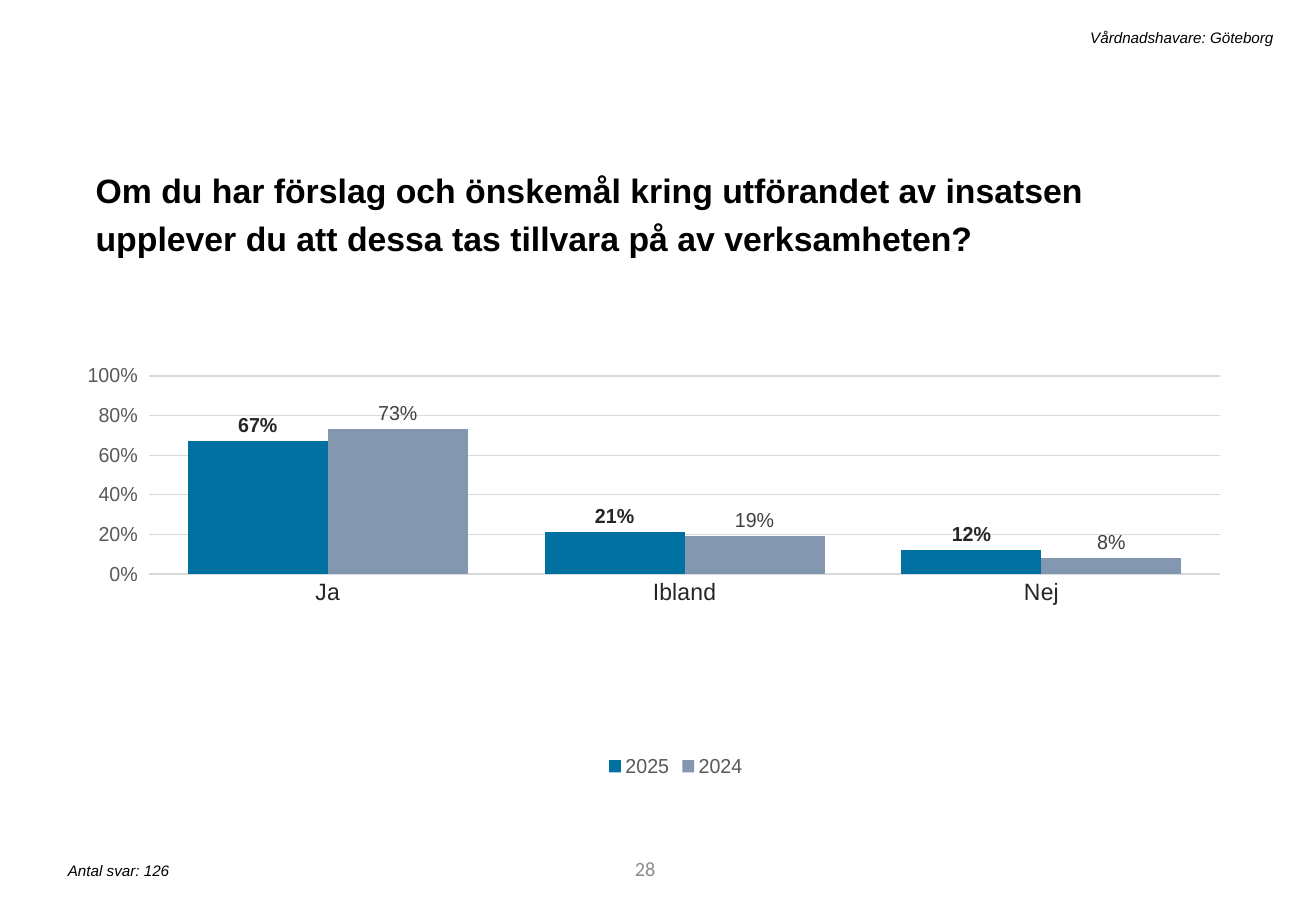
from lxml import etree
from pptx import Presentation
from pptx.chart.data import CategoryChartData
from pptx.dml.color import RGBColor
from pptx.enum.chart import XL_CHART_TYPE, XL_LABEL_POSITION, XL_LEGEND_POSITION, XL_TICK_MARK
from pptx.enum.text import MSO_ANCHOR, PP_ALIGN
from pptx.oxml.ns import qn
from pptx.util import Cm, Pt

COLUMNS = XL_CHART_TYPE.COLUMN_CLUSTERED
OUTSIDE_END = XL_LABEL_POSITION.OUTSIDE_END
BOTTOM = XL_LEGEND_POSITION.BOTTOM
TICK_NONE, TICK_OUT = XL_TICK_MARK.NONE, XL_TICK_MARK.OUTSIDE
TOP, MIDDLE = MSO_ANCHOR.TOP, MSO_ANCHOR.MIDDLE
LEFT, RIGHT = PP_ALIGN.LEFT, PP_ALIGN.RIGHT

BLACK = RGBColor(0x00, 0x00, 0x00)
INK = RGBColor(0x26, 0x26, 0x26)
DARK_GREY = RGBColor(0x40, 0x40, 0x40)
MID_GREY = RGBColor(0x59, 0x59, 0x59)
PAGE_GREY = RGBColor(0x8C, 0x8C, 0x8C)
GRID_GREY = RGBColor(0xD9, 0xD9, 0xD9)
BLUE = RGBColor(0x00, 0x71, 0xA1)
BLUE_GREY = RGBColor(0x84, 0x97, 0xB0)


def set_font(font, size, color, name="Arial", bold=False, italic=False):
    font.name, font.size = name, Pt(size)
    font.bold, font.italic = bold, italic
    font.color.rgb = color


def add_text(box, text, align=LEFT, anchor=TOP, **font):
    """Add a one-paragraph text box; box is left, top, width, height in cm."""
    tf = s.shapes.add_textbox(*map(Cm, box)).text_frame
    tf.word_wrap = True
    tf.vertical_anchor = anchor
    p = tf.paragraphs[0]
    p.alignment = align
    r = p.add_run()
    r.text = text
    set_font(r.font, **font)
    return p


prs = Presentation()
prs.slide_width, prs.slide_height = Cm(27.51), Cm(19.05)
s = prs.slides.add_slide(prs.slide_layouts[6])

# Texts
add_text((7.75, 17.65, 6.2, 1.02), "28", RIGHT, MIDDLE,
         size=12, color=PAGE_GREY, name="Calibri")
question = add_text(
    (1.75, 3.25, 23.88, 2.21),
    "Om du har förslag och önskemål kring utförandet av insatsen "
    "upplever du att dessa tas tillvara på av verksamheten?",
    size=20, color=BLACK, bold=True)
question.line_spacing = 1.2
question.space_before = Pt(10)
add_text((1.17, 17.88, 11.2, 0.64), "Antal svar: 126",
         size=9, color=BLACK, italic=True)
add_text((4.37, 0.46, 22.5, 0.64), "Vårdnadshavare: Göteborg", RIGHT,
         size=9, color=BLACK, italic=True)

# Chart
data = CategoryChartData(number_format="0%")
data.categories = ["Ja", "Ibland", "Nej"]
data.add_series("2025", (0.67, 0.21, 0.12))
data.add_series("2024", (0.73, 0.19, 0.08))
chart = s.shapes.add_chart(COLUMNS, Cm(1.83), Cm(6.32), Cm(23.88), Cm(10.03), data).chart
chart.has_title = False
set_font(chart.font, 10, BLACK)

chart.has_legend = True
chart.legend.position = BOTTOM
chart.legend.include_in_layout = False
set_font(chart.legend.font, 12, MID_GREY)

plot = chart.plots[0]
plot.gap_width, plot.overlap = 55, 0
plot.vary_by_categories = False
series_styles = [(BLUE, INK, True), (BLUE_GREY, DARK_GREY, False)]
for series, (fill, label_color, bold) in zip(plot.series, series_styles):
    series.format.fill.solid()
    series.format.fill.fore_color.rgb = fill
    labels = series.data_labels
    labels.show_value = True
    labels.position = OUTSIDE_END
    labels.number_format, labels.number_format_is_linked = "0%", False
    set_font(labels.font, 12, label_color, bold=bold)

cat_axis = chart.category_axis
cat_axis.major_tick_mark = TICK_NONE
set_font(cat_axis.tick_labels.font, 14, INK)

val_axis = chart.value_axis
val_axis.minimum_scale, val_axis.maximum_scale, val_axis.major_unit = 0, 1, 0.2
val_axis.major_tick_mark = TICK_OUT
val_axis.format.line.fill.background()
val_axis.tick_labels.number_format = "0%"
val_axis.tick_labels.number_format_is_linked = False
set_font(val_axis.tick_labels.font, 12, MID_GREY)

for line in (cat_axis.format.line, val_axis.major_gridlines.format.line):
    line.color.rgb = GRID_GREY
    line.width = Pt(0.75)

# Fixed plot area, as fractions of the chart
plot_area = chart.element.find(".//" + qn("c:plotArea"))
for old in plot_area.findall(qn("c:layout")):
    plot_area.remove(old)
layout = etree.Element(qn("c:layout"))
manual = etree.SubElement(layout, qn("c:manualLayout"))
for tag, value in [("layoutTarget", "inner"), ("xMode", "edge"), ("yMode", "edge"),
                   ("x", "0.025"), ("y", "0.154"), ("w", "0.966"), ("h", "0.413")]:
    etree.SubElement(manual, qn("c:" + tag)).set("val", value)
plot_area.insert(0, layout)

prs.save("out.pptx")
